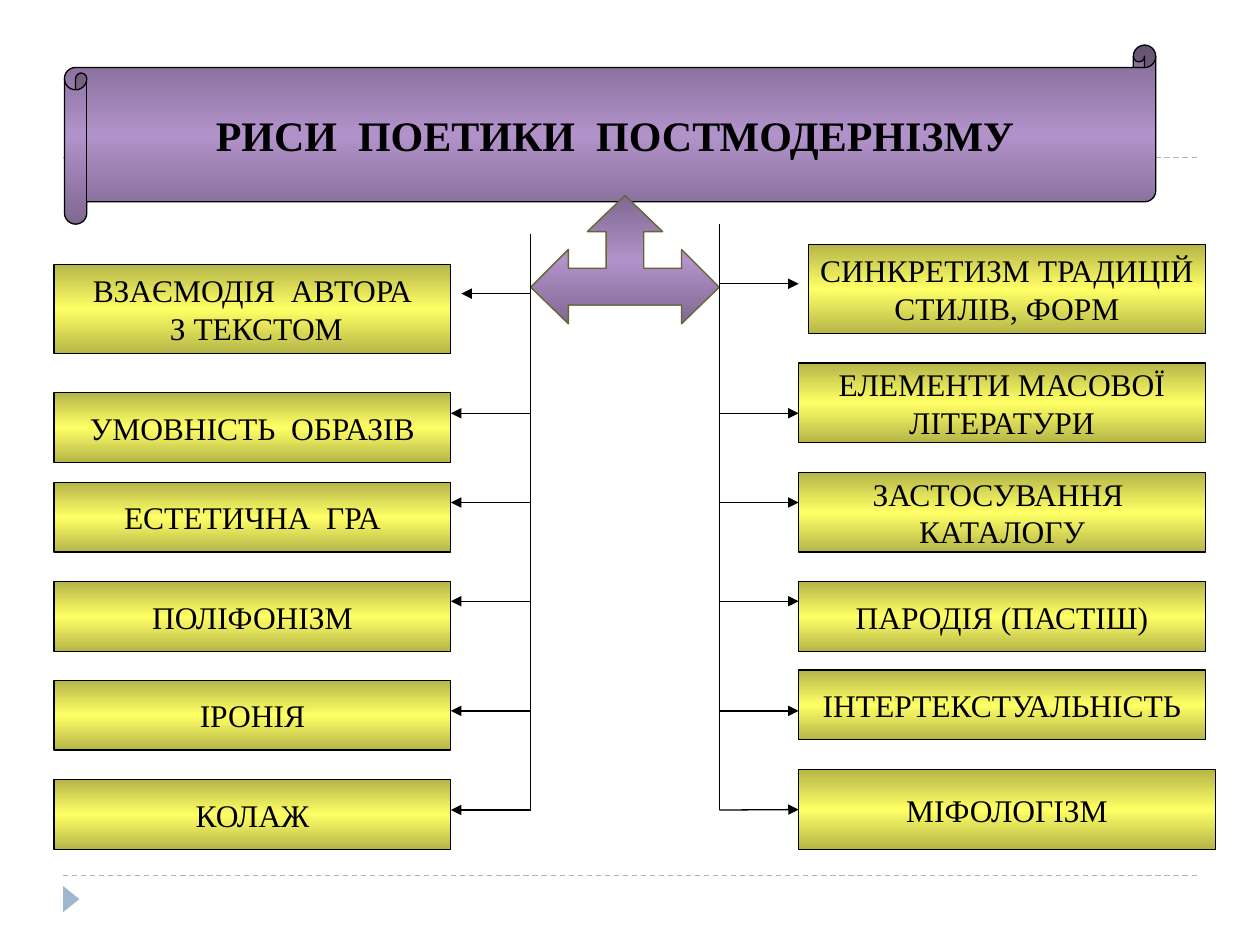
from copy import deepcopy
from dataclasses import dataclass
from pptx import Presentation
from pptx.dml.color import RGBColor as Rgb
from pptx.enum.dml import MSO_LINE as Dash
from pptx.enum.shapes import MSO_CONNECTOR as Link, MSO_SHAPE as Kind
from pptx.enum.text import MSO_ANCHOR as Anchor, MSO_AUTO_SIZE as Fit, PP_ALIGN as Align
from pptx.oxml.ns import qn
from pptx.oxml.xmlchemy import OxmlElement as Tag
from pptx.util import Cm, Pt


@dataclass(frozen=True)
class Theme:
    font: str = "Times New Roman"
    big: int = 24
    base: int = 18
    thin: float = 0.75
    ink: str = "000000"
    olive: str = "666633"
    pale: str = "9FB8CD"
    gold: tuple = ("B6B649", "FFFF66", "B6B649")
    plum: tuple = ("7F6890", "B292CA", "7F6890")


LOOK = Theme()

LEFT = [
    (1.09, 5.33, 8, 1.8, ["ВЗАЄМОДІЯ  АВТОРА", " З ТЕКСТОМ"]),
    (1.09, 7.92, 8, 1.4, ["УМОВНІСТЬ  ОБРАЗІВ"]),
    (1.09, 9.73, 8, 1.4, ["ЕСТЕТИЧНА  ГРА"]),
    (1.09, 11.73, 8, 1.4, ["ПОЛІФОНІЗМ"]),
    (1.09, 13.72, 8, 1.4, ["ІРОНІЯ"]),
    (1.09, 15.72, 8, 1.4, ["КОЛАЖ"]),
]
RIGHT = [
    (16.3, 4.93, 8, 1.8, ["СИНКРЕТИЗМ ТРАДИЦІЙ", "СТИЛІВ, ФОРМ"]),
    (16.1, 7.32, 8.2, 1.6, ["ЕЛЕМЕНТИ МАСОВОЇ", "ЛІТЕРАТУРИ"]),
    (16.1, 9.53, 8.2, 1.6, ["ЗАСТОСУВАННЯ ", "КАТАЛОГУ"]),
    (16.1, 11.73, 8.2, 1.4, ["ПАРОДІЯ (ПАСТІШ)"]),
    (16.1, 13.51, 8.2, 1.4, ["ІНТЕРТЕКСТУАЛЬНІСТЬ"]),
    (16.1, 15.52, 8.4, 1.6, ["МІФОЛОГІЗМ"]),
]
ROWS = [8.33, 10.13, 12.12, 14.33, 16.33]


def paint(shape, tones, edge):
    shape.shadow.inherit = False
    shape.fill.gradient()
    shape.fill.gradient_angle = 270
    stops = shape._element.spPr.find(".//" + qn("a:gsLst"))
    stops.insert(1, deepcopy(stops[0]))
    for stop, tone, place in zip(shape.fill.gradient_stops, tones, (0, 0.5, 1)):
        stop.color.rgb = Rgb.from_string(tone)
        stop.position = place
    shape.line.color.rgb = Rgb.from_string(edge)
    shape.line.width = Pt(LOOK.thin)


def write(frame, rows, size, bold=False):
    frame.word_wrap = False
    frame.auto_size = Fit.NONE
    frame.vertical_anchor = Anchor.MIDDLE
    for i, row in enumerate(rows):
        para = frame.add_paragraph() if i else frame.paragraphs[0]
        para.alignment = Align.CENTER
        run = para.add_run()
        run.text = row
        run.font.name = LOOK.font
        run.font.size = Pt(size)
        run.font.bold = bold
        run.font.color.rgb = Rgb.from_string(LOOK.ink)


def add_box(slide, x, y, w, h, rows):
    box = slide.shapes.add_shape(Kind.RECTANGLE, Cm(x), Cm(y), Cm(w), Cm(h))
    paint(box, LOOK.gold, LOOK.ink)
    write(box.text_frame, rows, LOOK.base)
    return box


def add_line(slide, x1, y1, x2, y2, tone=LOOK.ink, head=False):
    line = slide.shapes.add_connector(Link.STRAIGHT, Cm(x1), Cm(y1), Cm(x2), Cm(y2))
    line.line.color.rgb = Rgb.from_string(tone)
    line.line.width = Pt(LOOK.thin)
    if head:
        tip = Tag("a:tailEnd")
        tip.set("type", "triangle")
        line.line._get_or_add_ln().append(tip)
    line._element.spPr.append(Tag("a:effectLst"))
    return line


def add_frame(slide):
    for y in (17.65, 3.18):
        rule = add_line(slide, 1.27, y, 24.13, y, LOOK.pale)
        rule.line.dash_style = Dash.DASH
    mark = slide.shapes.add_shape(Kind.ISOSCELES_TRIANGLE, Cm(1.17), Cm(17.96), Cm(0.53), Cm(0.33))
    mark.rotation = 90
    mark.shadow.inherit = False
    mark.fill.solid()
    mark.fill.fore_color.rgb = Rgb.from_string(LOOK.pale)
    mark.line.fill.background()


def add_title(slide, text):
    scroll = slide.shapes.add_shape(Kind.HORIZONTAL_SCROLL, Cm(1.3), Cm(0.91), Cm(22), Cm(3.61))
    paint(scroll, LOOK.plum, LOOK.ink)
    title = slide.shapes.title
    title.left, title.top, title.width, title.height = Cm(1.75), Cm(1.36), Cm(21.3), Cm(2.7)
    write(title.text_frame, [text], LOOK.big, True)
    scroll._element.addnext(title._element)


def add_fork(slide):
    mid = 12.6
    half = [(0.76, 4.67), (0.38, 4.67), (0.38, 5.41), (1.14, 5.41),
            (1.14, 5.03), (1.9, 5.79), (1.14, 6.53), (1.14, 6.15)]
    dots = [(mid - dx, y) for dx, y in half]
    dots += [(mid + dx, y) for dx, y in reversed(half)]
    pen = slide.shapes.build_freeform(Cm(mid), Cm(3.94))
    pen.add_line_segments([(Cm(x), Cm(y)) for x, y in dots], close=True)
    paint(pen.convert_to_shape(), LOOK.plum, LOOK.olive)


def add_tree(slide, x, top, first, start, end):
    add_line(slide, x, top, x, ROWS[-1])
    add_line(slide, x, first, start, first, head=True)
    return [add_line(slide, x, y, end, y, head=True) for y in ROWS]


def main():
    deck = Presentation()
    deck.slide_width, deck.slide_height = Cm(25.4), Cm(19.05)
    slide = deck.slides.add_slide(deck.slide_layouts[5])
    add_frame(slide)
    add_title(slide, "РИСИ  ПОЕТИКИ  ПОСТМОДЕРНІЗМУ")
    boxes = [add_box(slide, *item) for item in LEFT + RIGHT]
    add_fork(slide)
    add_tree(slide, 10.7, 4.72, 5.92, 9.3, 9.09)
    twigs = add_tree(slide, 14.5, 4.52, 5.72, 16.1, 16.1)
    twigs[-1].end_connect(boxes[-1], 1)
    deck.save("out.pptx")


if __name__ == "__main__":
    main()
